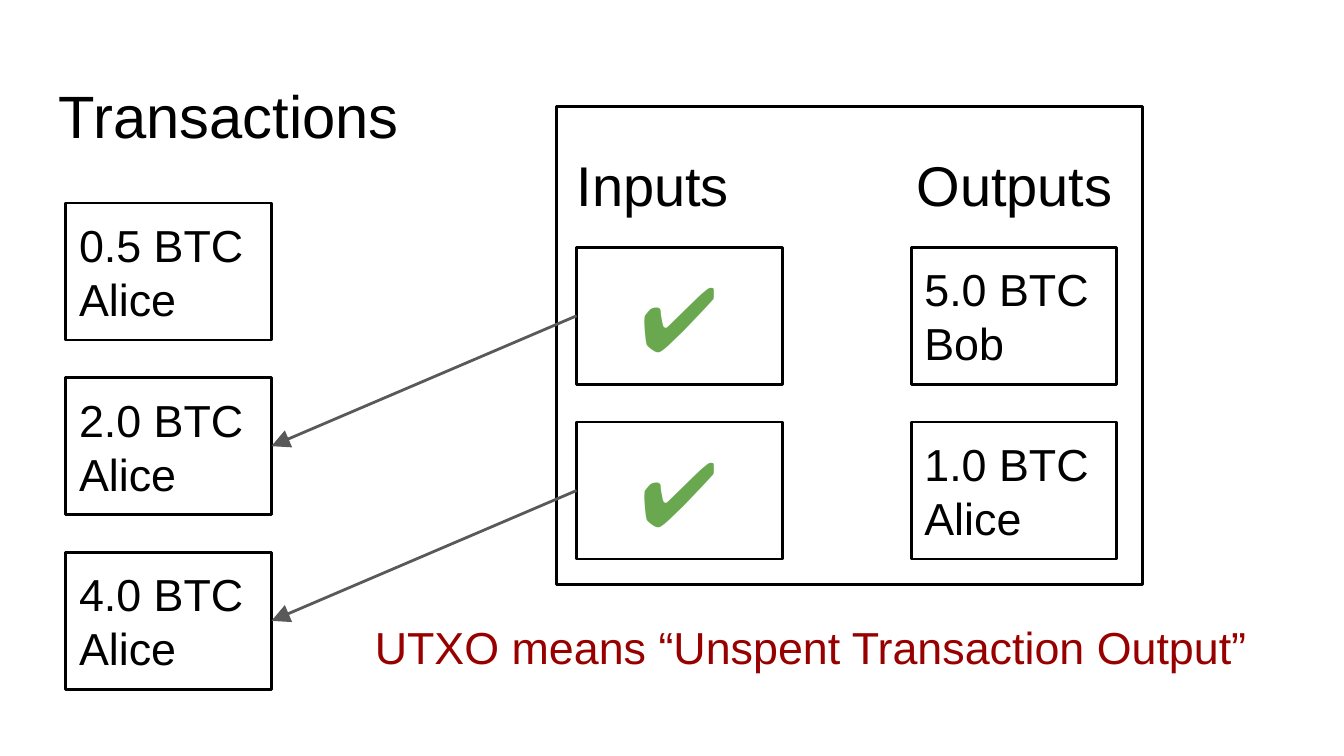
from typing import NamedTuple

from lxml import etree
from pptx import Presentation
from pptx import util as u
from pptx.dml.color import RGBColor
from pptx.enum import shapes, text
from pptx.oxml import ns

COLORS = {"ink": "000000", "check": "6AA84F", "note": "980000", "arrow": "595959"}
FONT = "Arial"
LINE_WIDTH = 1.5
INSET = 0.1

BOX_WIDTH, BOX_HEIGHT, ROW_PITCH = 1.53, 1.02, 1.3
COIN_LEFT, COIN_TOP = 0.49, 1.51
INPUT_LEFT, OUTPUT_LEFT, PANEL_ROW_TOP = 4.29, 6.78, 1.84
PANEL_LEFT, PANEL_TOP = 4.14, 0.79
HEADING_TOP, HEADING_TAB = 1.12, 2.53


class Label(NamedTuple):
    words: str
    left: float
    top: float
    width: float
    size: int
    color: str = "ink"


class Column(NamedTuple):
    left: float
    top: float
    entries: list[str]
    size: int = 24
    color: str = "ink"
    align: text.PP_ALIGN = text.PP_ALIGN.LEFT


def rgb(name: str) -> RGBColor:
    return RGBColor.from_string(COLORS[name])


def write(shape, words: str, size: int, color: str = "ink",
          align=text.PP_ALIGN.LEFT, anchor=text.MSO_ANCHOR.TOP) -> None:
    frame = shape.text_frame
    frame.word_wrap = True
    frame.vertical_anchor = anchor
    frame.margin_left = frame.margin_right = u.Inches(INSET)
    frame.margin_top = frame.margin_bottom = u.Inches(INSET)
    frame.text = words
    for para in frame.paragraphs:
        para.alignment = align
        para.font.name = FONT
        para.font.size = u.Pt(size)
        para.font.color.rgb = rgb(color)


def add_label(page, label: Label) -> None:
    box = page.shapes.add_textbox(
        u.Inches(label.left), u.Inches(label.top), u.Inches(label.width), u.Inches(0.63)
    )
    write(box, label.words, label.size, label.color)


def add_box(page, left: float, top: float, width: float, height: float):
    box = page.shapes.add_shape(
        shapes.MSO_SHAPE.RECTANGLE,
        u.Inches(left), u.Inches(top), u.Inches(width), u.Inches(height),
    )
    box.shadow.inherit = False
    box.fill.background()
    box.line.color.rgb = rgb("ink")
    box.line.width = u.Pt(LINE_WIDTH)
    return box


def add_panel(page) -> None:
    panel = add_box(page, PANEL_LEFT, PANEL_TOP, 4.36, 3.56)
    write(panel, "Inputs\tOutputs", 30)
    frame = panel.text_frame
    frame.margin_left = u.Inches(INPUT_LEFT - PANEL_LEFT)
    frame.margin_top = u.Inches(HEADING_TOP - PANEL_TOP)
    # Tab stop that sets the second heading over the outputs
    tabs = etree.Element(ns.qn("a:tabLst"))
    etree.SubElement(tabs, ns.qn("a:tab"), pos=str(u.Inches(HEADING_TAB)), algn="l")
    frame.paragraphs[0]._p.pPr.find(ns.qn("a:defRPr")).addprevious(tabs)


def add_column(page, column: Column) -> list:
    boxes = []
    for row, words in enumerate(column.entries):
        top = column.top + row * ROW_PITCH
        box = add_box(page, column.left, top, BOX_WIDTH, BOX_HEIGHT)
        write(box, words, column.size, column.color, column.align,
              text.MSO_ANCHOR.MIDDLE)
        boxes.append(box)
    return boxes


def add_arrow(page, source, target) -> None:
    arrow = page.shapes.add_connector(shapes.MSO_CONNECTOR.STRAIGHT, 0, 0, 0, 0)
    arrow.begin_connect(source, 1)
    arrow.end_connect(target, 3)
    arrow.line.color.rgb = rgb("arrow")
    arrow.line.width = u.Pt(LINE_WIDTH)
    # Arrowhead at the spent coin, and no shadow
    line = arrow.line._get_or_add_ln()
    etree.SubElement(line, ns.qn("a:tailEnd"), type="triangle", w="lg", len="lg")
    etree.SubElement(arrow._element.spPr, ns.qn("a:effectLst"))


def main() -> None:
    deck = Presentation()
    deck.slide_width = u.Inches(10)
    deck.slide_height = u.Inches(10 * 9 / 16)
    page = deck.slides.add_slide(deck.slide_layouts[6])

    # Earlier coins on the left
    add_label(page, Label("Transactions", 0.34, 0.49, 9.32, 32))
    coins = add_column(page, Column(
        COIN_LEFT, COIN_TOP, ["0.5 BTC\nAlice", "2.0 BTC\nAlice", "4.0 BTC\nAlice"]))

    # New transaction with its inputs and outputs
    add_panel(page)
    add_column(page, Column(
        OUTPUT_LEFT, PANEL_ROW_TOP, ["5.0 BTC\nBob", "1.0 BTC\nAlice"]))
    inputs = add_column(page, Column(
        INPUT_LEFT, PANEL_ROW_TOP, ["✔", "✔"], 48, "check", text.PP_ALIGN.CENTER))

    # Meaning of the abbreviation
    add_label(page, Label(
        "UTXO means “Unspent Transaction Output”", 2.69, 4.51, 6.82, 24, "note"))

    # Each input spends one earlier coin
    for source, target in zip(inputs, coins[1:]):
        add_arrow(page, source, target)

    deck.save("out.pptx")


if __name__ == "__main__":
    main()
